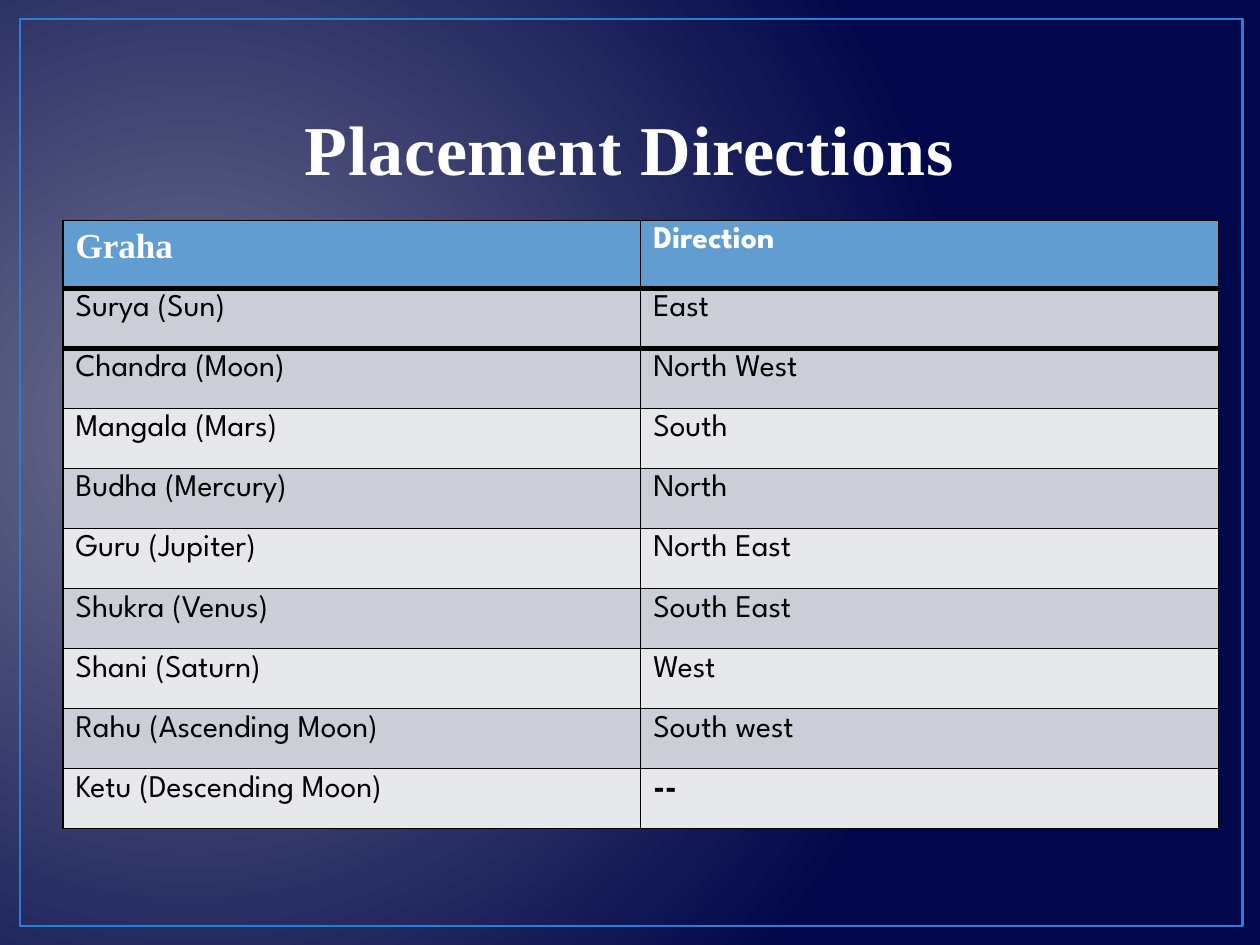
from dataclasses import dataclass

from lxml import etree
from pptx import Presentation
from pptx.dml.color import RGBColor
from pptx.enum.shapes import MSO_SHAPE
from pptx.enum.text import MSO_ANCHOR, PP_ALIGN
from pptx.oxml import parse_xml
from pptx.oxml.ns import nsdecls, qn
from pptx.util import Inches, Pt

COLORS = {
    "glow": "6E708E",
    "night": "01074A",
    "frame": "297FD5",
    "title": "FEFEFE",
    "header": "629DD1",
    "header_text": "FFFFFF",
    "dark_band": "CCCED7",
    "light_band": "E7E8EC",
    "ink": "000000",
}
SERIF = "Times New Roman"
SANS = "League Spartan"
TABLE_HEIGHT = 4.83
HEADER_HEIGHT = 0.54
THIN, THICK = 1, 3


@dataclass(frozen=True)
class Placement:
    graha: str
    direction: str


PLACEMENTS = [
    Placement("Surya (Sun)", "East"),
    Placement("Chandra (Moon)", "North West"),
    Placement("Mangala (Mars)", "South"),
    Placement("Budha (Mercury)", "North"),
    Placement("Guru (Jupiter)", "North East"),
    Placement("Shukra (Venus)", "South East"),
    Placement("Shani (Saturn)", "West"),
    Placement("Rahu (Ascending Moon)", "South west"),
    Placement("Ketu (Descending Moon)", "--"),
]


def rgb(name: str) -> RGBColor:
    return RGBColor.from_string(COLORS[name])


def write(frame, text: str, *, font=SANS, size=18, color="ink", bold=False,
          align=PP_ALIGN.LEFT, spacing=0.0) -> None:
    """Put one formatted run in a text frame; spacing is in points."""
    paragraph = frame.paragraphs[0]
    paragraph.alignment = align
    run = paragraph.add_run()
    run.text = text
    run.font.name = font
    run.font.size = Pt(size)
    run.font.bold = bold
    run.font.color.rgb = rgb(color)
    if spacing:
        run.font._element.set("spc", str(int(spacing * 100)))


def paint_background(slide) -> None:
    """Fill the background with a circular glow left of the centre."""
    fill = slide.background.fill
    fill.gradient()
    for stop, name, position in zip(fill.gradient_stops, ("glow", "night"), (0, 1)):
        stop.color.rgb = rgb(name)
        stop.position = position
    gradient = slide.background._cSld.find(".//" + qn("a:gradFill"))
    gradient.replace(gradient.find(qn("a:lin")), parse_xml(
        f'<a:path {nsdecls("a")} path="circle">'
        '<a:fillToRect l="15000" t="50000" r="85000" b="60000"/></a:path>'))


def add_frame(slide) -> None:
    frame = slide.shapes.add_shape(
        MSO_SHAPE.RECTANGLE, Inches(0.16), Inches(0.15), Inches(9.7), Inches(7.2))
    frame.shadow.inherit = False
    frame.fill.background()
    frame.line.color.rgb = rgb("frame")
    frame.line.width = Pt(1.5)


def add_title(slide) -> None:
    title = slide.shapes.add_textbox(
        Inches(0.5), Inches(0.3), Inches(9), Inches(1.25)).text_frame
    title.word_wrap = True
    title.vertical_anchor = MSO_ANCHOR.BOTTOM
    write(title, "Placement Directions", font=SERIF, size=40, color="title",
          bold=True, align=PP_ALIGN.CENTER, spacing=0.5)


def set_borders(cell, top: int, bottom: int) -> None:
    properties = cell._tc.get_or_add_tcPr()
    widths = {"lnL": THIN, "lnR": THIN, "lnT": top, "lnB": bottom}
    for index, (side, width) in enumerate(widths.items()):
        line = etree.Element(qn(f"a:{side}"), w=str(Pt(width)))
        fill = etree.SubElement(line, qn("a:solidFill"))
        etree.SubElement(fill, qn("a:srgbClr"), val=COLORS["ink"])
        properties.insert(index, line)


def add_placement_table(slide) -> None:
    row_count = len(PLACEMENTS) + 1
    table = slide.shapes.add_table(
        row_count, 2, Inches(0.5), Inches(1.75), Inches(9.17), Inches(TABLE_HEIGHT)).table
    row_height = (TABLE_HEIGHT - HEADER_HEIGHT) / len(PLACEMENTS)
    for index, row in enumerate(table.rows):
        row.height = Inches(row_height if index else HEADER_HEIGHT)
        if index == 0:
            band = "header"
        else:
            band = "light_band" if index > 1 and index % 2 else "dark_band"
        # Thick rules lie above and below the first body row.
        top = THICK if index in (1, 2) else THIN
        bottom = THICK if index in (0, 1) else THIN
        for cell in row.cells:
            cell.fill.solid()
            cell.fill.fore_color.rgb = rgb(band)
            set_borders(cell, top, bottom)

    write(table.cell(0, 0).text_frame, "Graha", font=SERIF, size=20,
          color="header_text", bold=True)
    write(table.cell(0, 1).text_frame, "Direction", color="header_text", bold=True)
    for index, placement in enumerate(PLACEMENTS, start=1):
        write(table.cell(index, 0).text_frame, placement.graha)
        write(table.cell(index, 1).text_frame, placement.direction,
              bold=placement.direction == "--")


def main() -> None:
    presentation = Presentation()
    presentation.slide_width = Inches(10)
    presentation.slide_height = Inches(7.5)
    slide = presentation.slides.add_slide(presentation.slide_layouts[6])
    paint_background(slide)
    add_frame(slide)
    add_title(slide)
    add_placement_table(slide)
    presentation.save("out.pptx")


if __name__ == "__main__":
    main()
